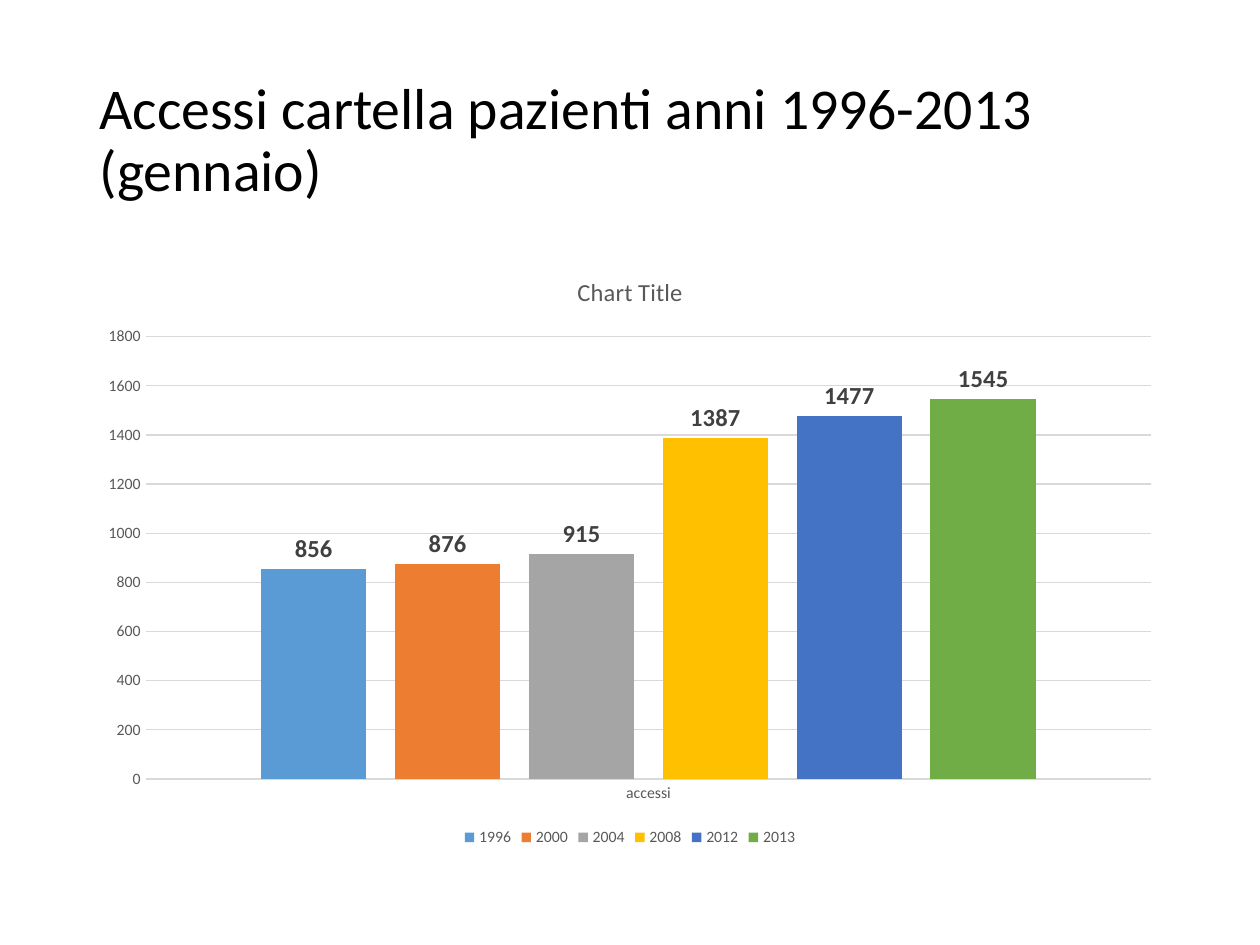
from pptx import Presentation
from pptx.chart.data import CategoryChartData
from pptx.dml.color import RGBColor
from pptx.enum.chart import XL_CHART_TYPE, XL_LABEL_POSITION, XL_LEGEND_POSITION, XL_TICK_MARK
from pptx.enum.text import MSO_ANCHOR
from pptx.util import Inches, Pt

HEADING = "Accessi cartella pazienti anni 1996-2013 (gennaio)"
CHART_TITLE = "Chart Title"
CATEGORY = "accessi"
ACCESSES = [
    ("1996", 856, "blue"),
    ("2000", 876, "orange"),
    ("2004", 915, "gray"),
    ("2008", 1387, "gold"),
    ("2012", 1477, "indigo"),
    ("2013", 1545, "green"),
]
COLORS = {
    "black": "000000",
    "label": "404040",
    "muted": "595959",
    "grid": "D9D9D9",
    "blue": "5B9BD5",
    "orange": "ED7D31",
    "gray": "A5A5A5",
    "gold": "FFC000",
    "indigo": "4472C4",
    "green": "70AD47",
}
FONT = "Calibri"
LEFT, WIDTH = Inches(0.69), Inches(8.62)


def color(name):
    return RGBColor.from_string(COLORS[name])


def style_font(font, size, name, bold=False):
    font.name = FONT
    font.size = Pt(size)
    font.bold = bold
    font.color.rgb = color(name)


def style_line(line):
    line.color.rgb = color("grid")
    line.width = Pt(0.75)


def add_heading(slide):
    frame = slide.shapes.add_textbox(LEFT, Inches(0.4), WIDTH, Inches(1.45)).text_frame
    frame.word_wrap = True
    frame.vertical_anchor = MSO_ANCHOR.MIDDLE
    heading = frame.paragraphs[0]
    heading.text = HEADING
    heading.line_spacing = 0.9
    style_font(heading.font, 33, "black")


def add_access_chart(slide):
    data = CategoryChartData()
    data.categories = [CATEGORY]
    for year, count, _ in ACCESSES:
        data.add_series(year, [count])
    chart = slide.shapes.add_chart(
        XL_CHART_TYPE.COLUMN_CLUSTERED, LEFT, Inches(2), WIDTH, Inches(4.76), data
    ).chart
    style_font(chart.font, 10, "black")

    chart.has_title = True
    chart.chart_title.include_in_layout = False
    title = chart.chart_title.text_frame.paragraphs[0]
    title.text = CHART_TITLE
    style_font(title.font, 14, "muted")

    chart.has_legend = True
    chart.legend.position = XL_LEGEND_POSITION.BOTTOM
    chart.legend.include_in_layout = False
    style_font(chart.legend.font, 9, "muted")

    for axis in (chart.category_axis, chart.value_axis):
        axis.major_tick_mark = XL_TICK_MARK.NONE
        axis.minor_tick_mark = XL_TICK_MARK.NONE
        style_font(axis.tick_labels.font, 9, "muted")
    style_line(chart.category_axis.format.line)
    chart.value_axis.format.line.fill.background()
    style_line(chart.value_axis.major_gridlines.format.line)

    plot = chart.plots[0]
    plot.gap_width = 219
    plot.overlap = -27
    plot.vary_by_categories = False
    for series, (_, _, fill) in zip(plot.series, ACCESSES):
        series.format.fill.solid()
        series.format.fill.fore_color.rgb = color(fill)
        labels = series.data_labels
        labels.show_value = True
        labels.position = XL_LABEL_POSITION.OUTSIDE_END
        style_font(labels.font, 14, "label", bold=True)


def main():
    deck = Presentation()
    deck.slide_width, deck.slide_height = Inches(10), Inches(7.5)
    slide = deck.slides.add_slide(deck.slide_layouts[6])
    add_heading(slide)
    add_access_chart(slide)
    deck.save("out.pptx")


if __name__ == "__main__":
    main()
